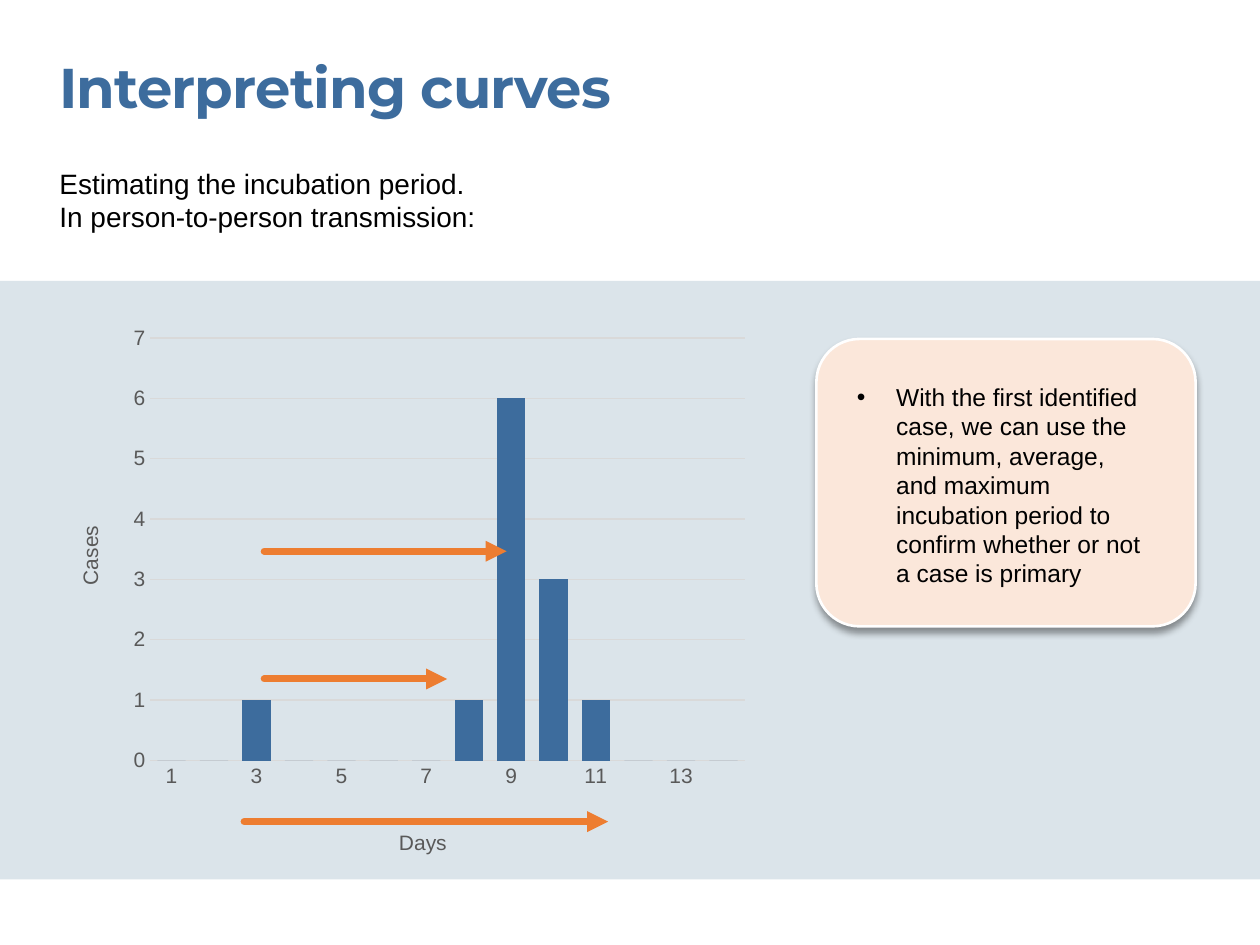
from lxml import etree
from pptx import Presentation
from pptx import util as u
from pptx.chart import data as cd
from pptx.dml import color
from pptx.enum import chart as ch, shapes, text
from pptx.oxml import ns, parse_xml

Pt = u.Pt
COLORS = {
    "blue": "3D6C9D",
    "band": "DBE4EA",
    "card": "FBE7DA",
    "white": "FFFFFF",
    "black": "000000",
    "label": "595959",
    "grid": "D9D9D9",
    "arrow": "ED7D31",
}
CASES = [0, 0, 1, 0, 0, 0, 0, 1, 6, 3, 1, 0, 0, 0]
ARROWS = [(139.5, 347.5, 469.5), (151, 255.5, 388), (151, 289.5, 315)]


def rgb(name):
    return color.RGBColor.from_string(COLORS[name])


def sub(parent, tag, **attrs):
    return etree.SubElement(parent, ns.qn(tag), attrs)


def style_font(font, size, name, face="Arial", bold=False):
    font.size = Pt(size)
    font.name = face
    font.bold = bold
    font.color.rgb = rgb(name)


def add_panel(s, kind, box, fill):
    sp = s.shapes.add_shape(kind, *map(Pt, box))
    sp.shadow.inherit = False
    sp.fill.solid()
    sp.fill.fore_color.rgb = rgb(fill)
    sp.line.fill.background()
    return sp


def add_card(s, box):
    sp = add_panel(s, shapes.MSO_SHAPE.ROUNDED_RECTANGLE, box, "card")
    sp.adjustments[0] = 0.15
    sp.line.color.rgb = rgb("white")
    sp.line.width = Pt(1.5)
    effects = sp._element.spPr.find(ns.qn("a:effectLst"))
    shadow = sub(effects, "a:outerShdw", blurRad=str(Pt(4)), dist=str(Pt(3)),
                 dir="5400000", algn="t", rotWithShape="0")
    clr = sub(shadow, "a:srgbClr", val=COLORS["black"])
    sub(clr, "a:alpha", val="40000")


def add_text(s, box, lines, size, name="black", face="Arial", bold=False, spacing=None):
    tf = s.shapes.add_textbox(*map(Pt, box)).text_frame
    tf.word_wrap = True
    tf.auto_size = text.MSO_AUTO_SIZE.SHAPE_TO_FIT_TEXT
    tf.margin_left = tf.margin_right = tf.margin_top = tf.margin_bottom = 0
    tf.text = "\n".join(lines)
    for p in tf.paragraphs:
        p.line_spacing = spacing
        for r in p.runs:
            style_font(r.font, size, name, face, bold)
    return tf


def add_bullet(p, indent):
    pPr = p._p.get_or_add_pPr()
    pPr.set("marL", str(Pt(indent)))
    pPr.set("indent", str(-Pt(indent)))
    clr = sub(pPr, "a:buClr")
    sub(clr, "a:srgbClr", val=COLORS["black"])
    sub(pPr, "a:buFont", typeface="Arial")
    sub(pPr, "a:buChar", char="•")


def place(parent, index, target=None, **fractions):
    old = parent.find(ns.qn("c:layout"))
    if old is not None:
        index = parent.index(old)
        parent.remove(old)
    layout = parse_xml(f"<c:layout {ns.nsdecls('c')}/>")
    manual = sub(layout, "c:manualLayout")
    if target:
        sub(manual, "c:layoutTarget", val=target)
    for mode in ("xMode", "yMode"):
        sub(manual, f"c:{mode}", val="edge")
    for key, value in fractions.items():
        sub(manual, f"c:{key}", val=str(value))
    parent.insert(index, layout)


def style_axis(axis, title, x, y):
    axis.major_tick_mark = axis.minor_tick_mark = ch.XL_TICK_MARK.NONE
    style_font(axis.tick_labels.font, 12, "label")
    tf = axis.axis_title.text_frame
    tf.text = title
    style_font(tf.paragraphs[0].runs[0].font, 12, "label")
    place(axis.axis_title._element, 1, x=x, y=y)


def add_cases_chart(s, box):
    data = cd.CategoryChartData()
    data.categories = [str(day) if day % 2 else "" for day in range(1, len(CASES) + 1)]
    data.add_series("Series 1", CASES)
    chart = s.shapes.add_chart(ch.XL_CHART_TYPE.COLUMN_CLUSTERED, *map(Pt, box), data).chart
    chart.has_legend = chart.has_title = False
    style_font(chart.font, 10, "black")
    plot = chart.plots[0]
    plot.gap_width = 50
    plot.vary_by_categories = False
    fill = plot.series[0].format.fill
    fill.solid()
    fill.fore_color.rgb = rgb("blue")

    days, cases = chart.category_axis, chart.value_axis
    style_axis(days, "Days", 0.48, 0.94)
    style_axis(cases, "Cases", 0.02, 0.38)
    cases.axis_title.text_frame._txBody.bodyPr.set("rot", "-5400000")
    cases.axis_title.text_frame._txBody.bodyPr.set("vert", "horz")
    cases.minimum_scale, cases.maximum_scale, cases.major_unit = 0, 7, 1
    cases.format.line.fill.background()
    for line in (days.format.line, cases.major_gridlines.format.line):
        line.color.rgb = rgb("grid")
        line.width = Pt(0.75)
    place(chart._chartSpace.chart.plotArea, 0, "inner", x=0.13, y=0.04, w=0.85, h=0.78)


def add_arrow(s, x1, x2, y):
    sp = s.shapes.add_connector(shapes.MSO_CONNECTOR.STRAIGHT, Pt(x1), Pt(y), Pt(x2), Pt(y))
    sp.line.color.rgb = rgb("arrow")
    sp.line.width = Pt(4)
    ln = sp.line._get_or_add_ln()
    ln.set("cap", "rnd")
    sub(ln, "a:tailEnd", type="triangle")
    sub(sp._element.spPr, "a:effectLst")


def main():
    prs = Presentation()
    prs.slide_width, prs.slide_height = Pt(720), Pt(540)
    s = prs.slides.add_slide(prs.slide_layouts[6])

    add_panel(s, shapes.MSO_SHAPE.RECTANGLE, (0, 160.5, 720, 342), "band")
    add_card(s, (466.5, 193.7, 216.7, 164.2))
    title = add_text(s, (34, 30.2, 649.5, 39), ["Interpreting curves"], 32, "blue",
                     "Montserrat", True)
    title.paragraphs[0].runs[0].font._element.set("spc", "-50")
    note = add_text(s, (489.6, 218.2, 165.6, 118.8),
                    ["With the first identified case, we can use the minimum, average, "
                     "and maximum incubation period to confirm whether or not a case "
                     "is primary"], 14, spacing=Pt(16.8))
    add_bullet(note.paragraphs[0], 22.5)
    add_cases_chart(s, (34, 180.7, 399.6, 311))
    add_text(s, (34, 95, 649.5, 39),
             ["Estimating the incubation period.", "In person-to-person transmission:"],
             16, spacing=Pt(19.2))
    for arrow in ARROWS:
        add_arrow(s, *arrow)
    prs.save("out.pptx")


if __name__ == "__main__":
    main()
